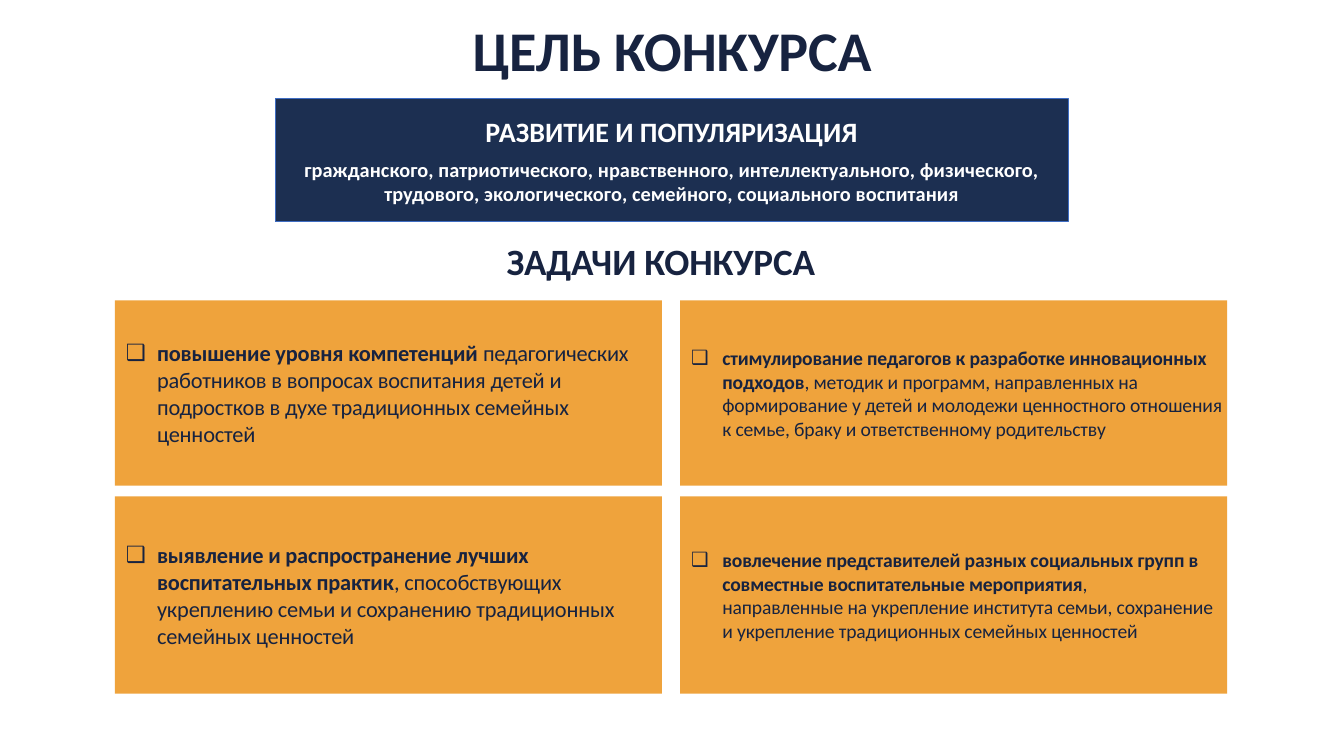
from dataclasses import dataclass

from lxml.etree import SubElement
from pptx import Presentation
from pptx.dml.color import RGBColor as RGB
from pptx.enum.shapes import MSO_SHAPE as Shape
from pptx.enum.text import MSO_ANCHOR as Anchor, PP_ALIGN as Align
from pptx.oxml.ns import qn
from pptx.util import Pt


@dataclass(frozen=True)
class Theme:
    font: str = "Calibri"
    navy: str = "172340"
    banner: str = "1C2F51"
    banner_line: str = "3E6DC3"
    card: str = "EFA33C"
    white: str = "FFFFFF"
    title: float = 40
    heading: float = 26.5
    lead: float = 20
    detail: float = 14.5
    task_large: float = 16
    task_small: float = 14


T = Theme()

TASKS = [
    (T.task_large, [
        [("повышение уровня компетенций ", True),
         ("педагогических работников в вопросах воспитания детей и", False)],
        [("подростков в духе традиционных семейных ценностей", False)],
    ]),
    (T.task_small, [
        [("стимулирование педагогов к разработке инновационных подходов", True),
         (", методик и программ, направленных на формирование у детей и молодежи "
          "ценностного отношения к семье, браку и ответственному родительству", False)],
    ]),
    (T.task_large, [
        [("выявление и распространение лучших", True)],
        [("воспитательных практик", True), (", способствующих", False)],
        [("укреплению семьи и сохранению традиционных семейных ценностей", False)],
    ]),
    (T.task_small, [
        [("вовлечение представителей разных социальных групп в "
          "совместные воспитательные мероприятия", True), (",", False)],
        [("направленные на укрепление института семьи, "
          "сохранение и укрепление традиционных семейных ценностей", False)],
    ]),
]


def place(sp, box):
    sp.left, sp.top, sp.width, sp.height = (Pt(v) for v in box)


def setup_frame(sp, anchor):
    tf = sp.text_frame
    tf.word_wrap = True
    tf.vertical_anchor = anchor
    tf.margin_left = tf.margin_right = tf.margin_top = tf.margin_bottom = 0
    return tf


def add_run(p, text, size, color, bold=True, spacing=-0.1):
    r = p.add_run()
    r.text = text
    r.font.name = T.font
    r.font.size = Pt(size)
    r.font.bold = bold
    r.font.color.rgb = RGB.from_string(color)
    r.font._element.set("spc", str(round(spacing * 100)))


def add_panel(slide, box, fill, line=None):
    sp = slide.shapes.add_shape(Shape.RECTANGLE, *(Pt(v) for v in box))
    sp.shadow.inherit = False
    sp.fill.solid()
    sp.fill.fore_color.rgb = RGB.from_string(fill)
    if line:
        sp.line.color.rgb = RGB.from_string(line)
        sp.line.width = Pt(0.72)
    else:
        sp.line.fill.background()
    return setup_frame(sp, Anchor.MIDDLE)


def add_heading(sp, box, text, size):
    place(sp, box)
    tf = setup_frame(sp, Anchor.MIDDLE)
    p = tf.paragraphs[0]
    p.alignment = Align.CENTER
    add_run(p, text, size, T.navy)


def add_banner(slide, box, lead, detail):
    tf = add_panel(slide, box, T.banner, T.banner_line)
    p = tf.paragraphs[0]
    p.alignment = Align.CENTER
    add_run(p, lead, T.lead, T.white, spacing=0)
    p = tf.add_paragraph()
    p.alignment = Align.CENTER
    p.space_before = Pt(6)
    add_run(p, detail, T.detail, T.white, spacing=0.05)


def set_indent(p, bullet):
    pPr = p._p.get_or_add_pPr()
    pPr.set("marL", str(Pt(30.2)))
    pPr.set("indent", str(Pt(-22.3) if bullet else 0))
    if bullet:
        color = SubElement(pPr, qn("a:buClr"))
        SubElement(color, qn("a:srgbClr"), val=T.navy)
        SubElement(pPr, qn("a:buFont"), typeface=T.font)
        SubElement(pPr, qn("a:buChar"), char="❑")


def add_task(slide, box, size, paragraphs):
    tf = add_panel(slide, box, T.card)
    for i, runs in enumerate(paragraphs):
        p = tf.paragraphs[0] if i == 0 else tf.add_paragraph()
        p.alignment = Align.LEFT
        set_indent(p, bullet=i == 0)
        for text, bold in runs:
            add_run(p, text, size, T.navy, bold)


def add_task_grid(slide, box, tasks):
    x, y, w, h = box
    gap_x, gap_y = 13, 7.5
    card_w = (w - gap_x) / 2
    top_h = 132.5
    rows = [(y, top_h), (y + top_h + gap_y, h - top_h - gap_y)]
    for i, (size, paragraphs) in enumerate(tasks):
        row, col = divmod(i, 2)
        top, card_h = rows[row]
        add_task(slide, (x + col * (card_w + gap_x), top, card_w, card_h), size, paragraphs)


def main():
    prs = Presentation()
    prs.slide_width, prs.slide_height = Pt(960), Pt(540)
    slide = prs.slides.add_slide(prs.slide_layouts[5])
    add_heading(slide.shapes.title, (335, 10, 290, 50), "ЦЕЛЬ КОНКУРСА", T.title)
    add_banner(slide, (196.5, 70.5, 566.5, 88), "РАЗВИТИЕ И ПОПУЛЯРИЗАЦИЯ",
               "гражданского, патриотического, нравственного, интеллектуального, физического, "
               "трудового, экологического, семейного, социального воспитания")
    subtitle = slide.shapes.add_textbox(0, 0, 0, 0)
    add_heading(subtitle, (352, 169, 240, 35), "ЗАДАЧИ КОНКУРСА", T.heading)
    add_task_grid(slide, (82, 214.5, 794.5, 281), TASKS)
    prs.save("out.pptx")


if __name__ == "__main__":
    main()
